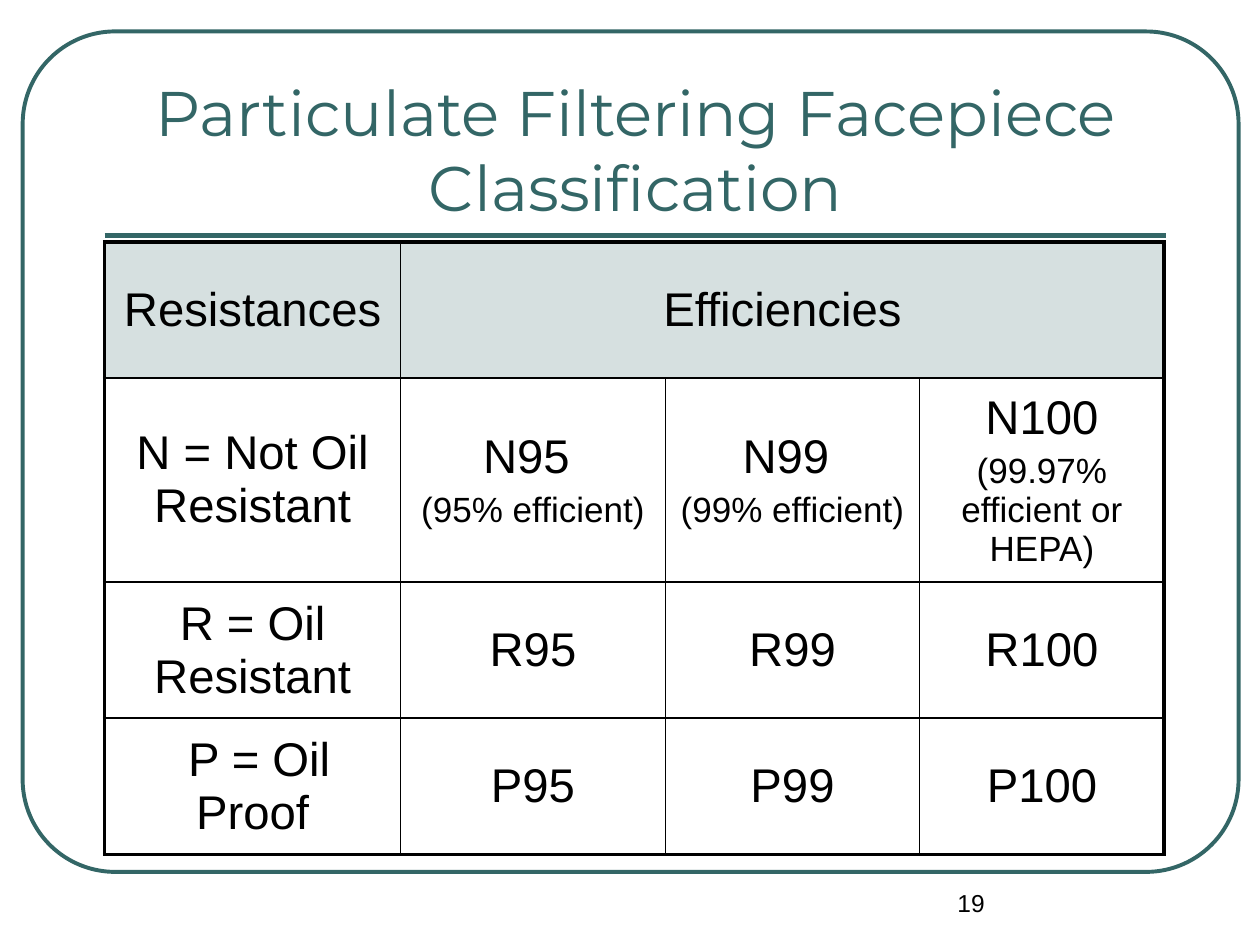
import pptx
import pptx.util
import pptx.dml.color
import pptx.enum.shapes
import pptx.enum.text
import pptx.oxml
import pptx.oxml.ns

Inches = pptx.util.Inches
Pt = pptx.util.Pt
ALIGN = pptx.enum.text.PP_ALIGN
ANCHOR = pptx.enum.text.MSO_ANCHOR

TITLE = "Particulate Filtering Facepiece Classification"
PAGE_NUMBER = "19"
CLASSES = [
    [["Resistances"], ["Efficiencies"], [], []],
    [["N = Not Oil Resistant"], ["N95 ", "(95% efficient)"],
     ["N99 ", "(99% efficient)"], ["N100", "(99.97% efficient or HEPA)"]],
    [["R = Oil Resistant"], ["R95"], ["R99"], ["R100"]],
    [[" P = Oil Proof"], ["P95"], ["P99"], ["P100"]],
]
COLUMN_WIDTHS = [2.35, 2.1, 2.02, 1.94]
ROW_HEIGHTS = [1.08, 1.62, 1.08, 1.08]

THEME = {
    "teal": "336666", "ink": "000000", "header": "D6E0E0", "body": "FFFFFF",
    "title_font": "Montserrat", "body_font": "Arial",
    "title_size": 36, "class_size": 27, "detail_size": 20, "page_size": 14,
    "outer_line": 2.25, "inner_line": 1, "rule_line": 3,
}


def color(key):
    return pptx.dml.color.RGBColor.from_string(THEME[key])


def add_run(paragraph, words, size, font="body_font", ink="ink"):
    run = paragraph.add_run()
    run.text = words
    run.font.size = Pt(THEME[size])
    run.font.name = THEME[font]
    run.font.color.rgb = color(ink)


def add_text(slide, box, words, size, align, anchor, font="body_font", ink="ink"):
    frame = slide.shapes.add_textbox(*map(Inches, box)).text_frame
    frame.word_wrap = True
    frame.vertical_anchor = anchor
    frame.paragraphs[0].alignment = align
    add_run(frame.paragraphs[0], words, size, font, ink)


def add_border(cell, side, line):
    cell._tc.get_or_add_tcPr().append(pptx.oxml.parse_xml(
        f'<a:ln{side} {pptx.oxml.ns.nsdecls("a")} w="{Pt(THEME[line])}">'
        f'<a:solidFill><a:srgbClr val="{THEME["ink"]}"/></a:solidFill></a:ln{side}>'))


def fill_cell(cell, lines, row, column):
    edges = {"L": column == 0, "R": column == len(COLUMN_WIDTHS) - 1,
             "T": row == 0, "B": row == len(ROW_HEIGHTS) - 1}
    if cell.is_merge_origin:
        edges["R"] = True
    for side, outer in edges.items():
        add_border(cell, side, "outer_line" if outer else "inner_line")
    cell.fill.solid()
    cell.fill.fore_color.rgb = color("header" if row == 0 else "body")
    cell.vertical_anchor = ANCHOR.MIDDLE
    for index, words in enumerate(lines):
        frame = cell.text_frame
        paragraph = frame.add_paragraph() if index else frame.paragraphs[0]
        size = "detail_size" if index else "class_size"
        paragraph.alignment = ALIGN.CENTER
        paragraph.space_before = Pt(THEME[size] * 0.2)
        add_run(paragraph, words, size)


def add_frame(slide):
    border = slide.shapes.add_shape(
        pptx.enum.shapes.MSO_SHAPE.ROUNDED_RECTANGLE,
        *map(Inches, (0.18, 0.25, 9.65, 6.67)))
    border.adjustments[0] = 0.11
    border.shadow.inherit = False
    border.fill.background()
    border.line.color.rgb = color("teal")
    border.line.width = Pt(THEME["outer_line"])
    rule = slide.shapes.add_connector(
        pptx.enum.shapes.MSO_CONNECTOR.STRAIGHT,
        *map(Inches, (0.83, 1.87, 9.25, 1.87)))
    rule.line.color.rgb = color("teal")
    rule.line.width = Pt(THEME["rule_line"])
    rule._element.spPr.append(pptx.oxml.parse_xml(
        f'<a:effectLst {pptx.oxml.ns.nsdecls("a")}/>'))


def add_classes(slide):
    table = slide.shapes.add_table(
        len(ROW_HEIGHTS), len(COLUMN_WIDTHS), Inches(0.83), Inches(1.92),
        Inches(sum(COLUMN_WIDTHS)), Inches(sum(ROW_HEIGHTS))).table
    table.first_row = table.horz_banding = False
    for column, width in zip(table.columns, COLUMN_WIDTHS):
        column.width = Inches(width)
    for row, height in zip(table.rows, ROW_HEIGHTS):
        row.height = Inches(height)
    table.cell(0, 1).merge(table.cell(0, 3))
    for row, entries in enumerate(CLASSES):
        for column, lines in enumerate(entries):
            fill_cell(table.cell(row, column), lines, row, column)


def main():
    deck = pptx.Presentation()
    deck.slide_width, deck.slide_height = Inches(10), Inches(7.5)
    slide = deck.slides.add_slide(deck.slide_layouts[6])
    add_frame(slide)
    add_text(slide, (7.5, 7, 1.75, 0.5), PAGE_NUMBER, "page_size",
             ALIGN.LEFT, ANCHOR.TOP)
    add_text(slide, (0.67, 0.58, 8.75, 1.25), TITLE, "title_size",
             ALIGN.CENTER, ANCHOR.BOTTOM, "title_font", "teal")
    add_classes(slide)
    deck.save("out.pptx")


if __name__ == "__main__":
    main()
